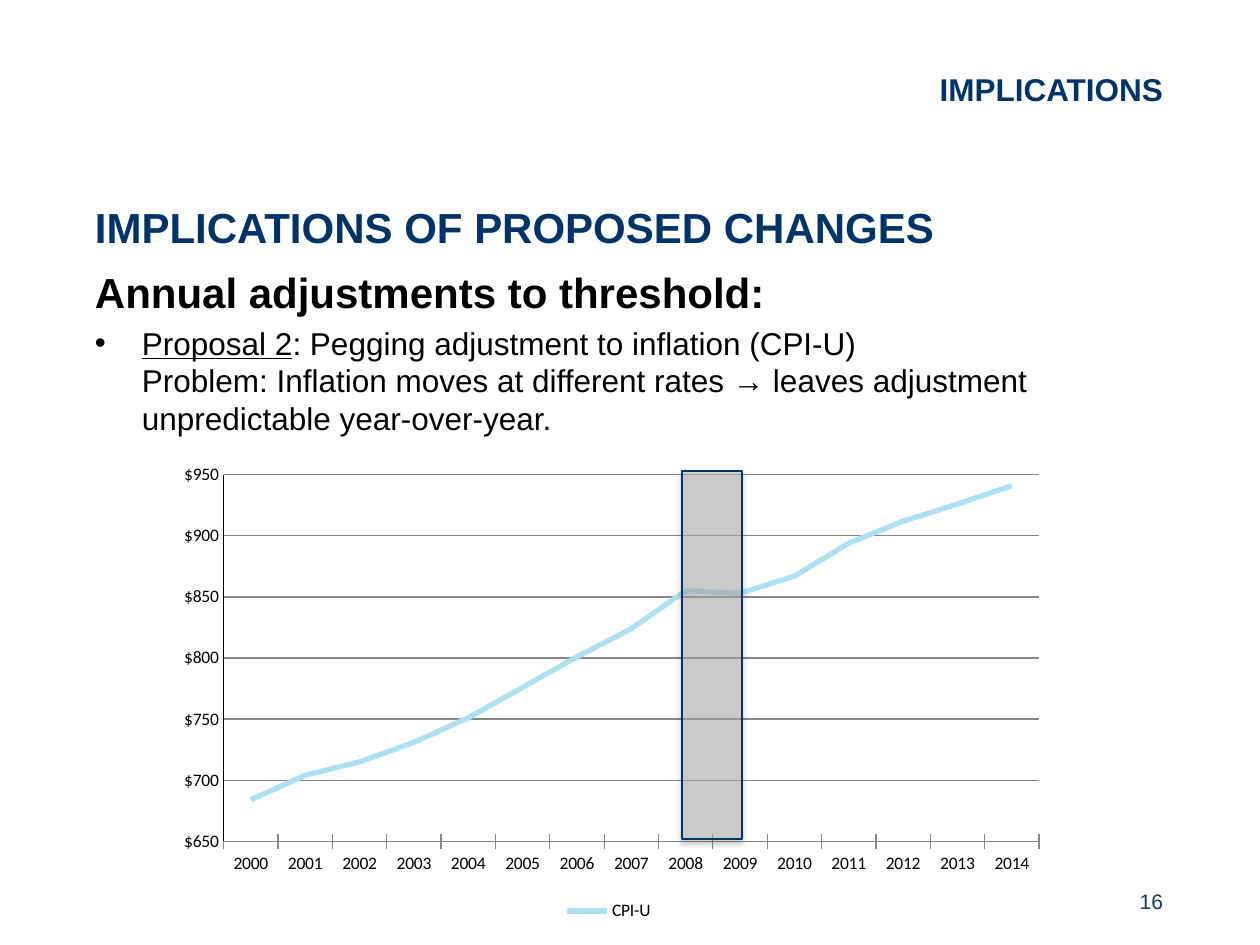
from lxml import etree
from pptx import Presentation
from pptx.chart.data import CategoryChartData
from pptx.dml.color import RGBColor
from pptx.enum import chart as charts, shapes, text
from pptx.oxml import parse_xml
from pptx.oxml.ns import nsdecls, qn
from pptx.util import Emu, Pt

NAVY = RGBColor(0x00, 0x34, 0x69)
NUMBER_BLUE = RGBColor(0x17, 0x37, 0x5E)
BLACK = RGBColor(0, 0, 0)
SKY = RGBColor(0xAD, 0xE0, 0xF2)
GRAY = RGBColor(0xBF, 0xBF, 0xBF)
GRID = RGBColor(0x86, 0x86, 0x86)

RIGHT, LEFT = text.PP_ALIGN.RIGHT, text.PP_ALIGN.LEFT
MIDDLE, TOP = text.MSO_ANCHOR.MIDDLE, text.MSO_ANCHOR.TOP

HEADING = {"size": Pt(24), "bold": True, "color": NAVY}
BODY = {"size": Pt(18), "color": BLACK}
BOXES = [
    {"at": (441, 38, 735, 129), "inset": 13, "align": RIGHT, "anchor": MIDDLE,
     "paras": [{"lines": [[("IMPLICATIONS", HEADING | {"size": Pt(18)})]]}]},
    {"at": (95, 260, 1070, 152), "inset": 0, "align": LEFT, "anchor": TOP,
     "paras": [
         {"lines": [[("Annual adjustments to threshold:", HEADING | {"color": BLACK})]]},
         {"bullet": "•", "before": 4, "lines": [
             [("Proposal 2", BODY | {"underline": True}),
              (": Pegging adjustment to inflation (CPI-U)", BODY)],
             [("Problem: Inflation moves at different rates → leaves adjustment "
               "unpredictable year-over-year.", BODY)]]}]},
    {"at": (95, 195, 1070, 63), "inset": 0, "align": LEFT, "anchor": TOP,
     "paras": [{"lines": [[("IMPLICATIONS OF PROPOSED CHANGES", HEADING)]]}]},
    {"at": (903, 876, 273, 50), "inset": 13, "align": RIGHT, "anchor": MIDDLE,
     "paras": [{"lines": [[("16", {"size": Pt(12), "color": NUMBER_BLUE})]]}]},
]
BOXES[0]["at"] = (441, 38, 735, 102)

FIRST_YEAR = 2000
CPI_U = [684, 704, 715, 731, 751, 776, 801, 824, 855, 853, 867, 894, 912, 926, 941]
CHART_AT = (161, 456, 896, 470)
PLOT = {"x": 0.07, "y": 0.04, "w": 0.91, "h": 0.78}
RECESSION_AT = (682, 471, 60, 368)


def px(value):
    return Emu(round(value * 914400 / 126))


def place(at):
    return [px(value) for value in at]


def set_all(target, values):
    for name, value in values.items():
        setattr(target, name, value)


def style_line(line, color, width):
    line.color.rgb = color
    line.width = Pt(width)


def add_bullet(para, mark):
    props = para._p.get_or_add_pPr()
    props.set("marL", str(px(47)))
    props.set("indent", str(-px(47)))
    etree.SubElement(props, qn("a:buFont")).set("typeface", "Arial")
    etree.SubElement(props, qn("a:buChar")).set("char", mark)


def add_span(para, words, style):
    span = para.add_run()
    span.text = words
    set_all(span.font, {"name": "Arial"} | {k: v for k, v in style.items() if k != "color"})
    span.font.color.rgb = style["color"]


def add_text(page, item):
    frame = page.shapes.add_textbox(*place(item["at"])).text_frame
    set_all(frame, {"word_wrap": True, "vertical_anchor": item["anchor"],
                    "margin_left": px(item["inset"]), "margin_right": px(item["inset"])})
    for index, content in enumerate(item["paras"]):
        para = frame.add_paragraph() if index else frame.paragraphs[0]
        para.alignment = item["align"]
        if "before" in content:
            para.space_before = Pt(content["before"])
        if "bullet" in content:
            add_bullet(para, content["bullet"])
        for number, line in enumerate(content["lines"]):
            if number:
                para.add_line_break()
            for words, style in line:
                add_span(para, words, style)


def set_plot_layout(chart):
    area = chart._chartSpace.chart.plotArea
    for old in area.findall(qn("c:layout")):
        area.remove(old)
    modes = '<c:xMode val="edge"/><c:yMode val="edge"/>'
    sizes = "".join(f'<c:{name} val="{value}"/>' for name, value in PLOT.items())
    area.insert(0, parse_xml(
        f'<c:layout {nsdecls("c")}><c:manualLayout><c:layoutTarget val="inner"/>'
        f'{modes}{sizes}</c:manualLayout></c:layout>'))


def add_cpi_chart(page):
    data = CategoryChartData()
    data.categories = [str(FIRST_YEAR + step) for step in range(len(CPI_U))]
    data.add_series("CPI-U", CPI_U)
    chart = page.shapes.add_chart(charts.XL_CHART_TYPE.LINE, *place(CHART_AT), data).chart
    set_all(chart, {"has_title": False, "has_legend": True})
    set_all(chart.font, {"name": "Calibri", "size": Pt(10)})
    chart.font.color.rgb = BLACK
    set_all(chart.legend, {"position": charts.XL_LEGEND_POSITION.BOTTOM,
                           "include_in_layout": False})
    chart.plots[0].vary_by_categories = False
    series = chart.plots[0].series[0]
    series.smooth = False
    series.marker.style = charts.XL_MARKER_STYLE.NONE
    style_line(series.format.line, SKY, 3)
    years, dollars = chart.category_axis, chart.value_axis
    years.major_tick_mark = charts.XL_TICK_MARK.CROSS
    style_line(years.format.line, GRID, 0.75)
    set_all(dollars, {"minimum_scale": 650, "maximum_scale": 950, "major_unit": 50,
                      "major_tick_mark": charts.XL_TICK_MARK.NONE,
                      "has_major_gridlines": True})
    set_all(dollars.tick_labels, {"number_format": '"$"#,##0',
                                  "number_format_is_linked": False})
    style_line(dollars.format.line, BLACK, 0.75)
    style_line(dollars.major_gridlines.format.line, GRID, 0.75)
    set_plot_layout(chart)


def add_recession_band(page):
    band = page.shapes.add_shape(shapes.MSO_SHAPE.RECTANGLE, *place(RECESSION_AT))
    band.fill.solid()
    band.fill.fore_color.rgb = GRAY
    style_line(band.line, NAVY, 0.75)
    color = band._element.spPr.find(qn("a:solidFill"))[0]
    etree.SubElement(color, qn("a:alpha")).set("val", "48000")
    band._element.spPr.append(parse_xml(
        f'<a:effectLst {nsdecls("a")}><a:outerShdw blurRad="{Pt(3.1)}" dist="{Pt(1.8)}" '
        'dir="5400000" rotWithShape="0"><a:srgbClr val="000000"><a:alpha val="35000"/>'
        '</a:srgbClr></a:outerShdw></a:effectLst>'))


def main():
    deck = Presentation()
    set_all(deck, {"slide_width": px(1260), "slide_height": px(945)})
    page = deck.slides.add_slide(deck.slide_layouts[6])
    for item in BOXES:
        add_text(page, item)
    add_cpi_chart(page)
    add_recession_band(page)
    deck.save("out.pptx")


if __name__ == "__main__":
    main()
